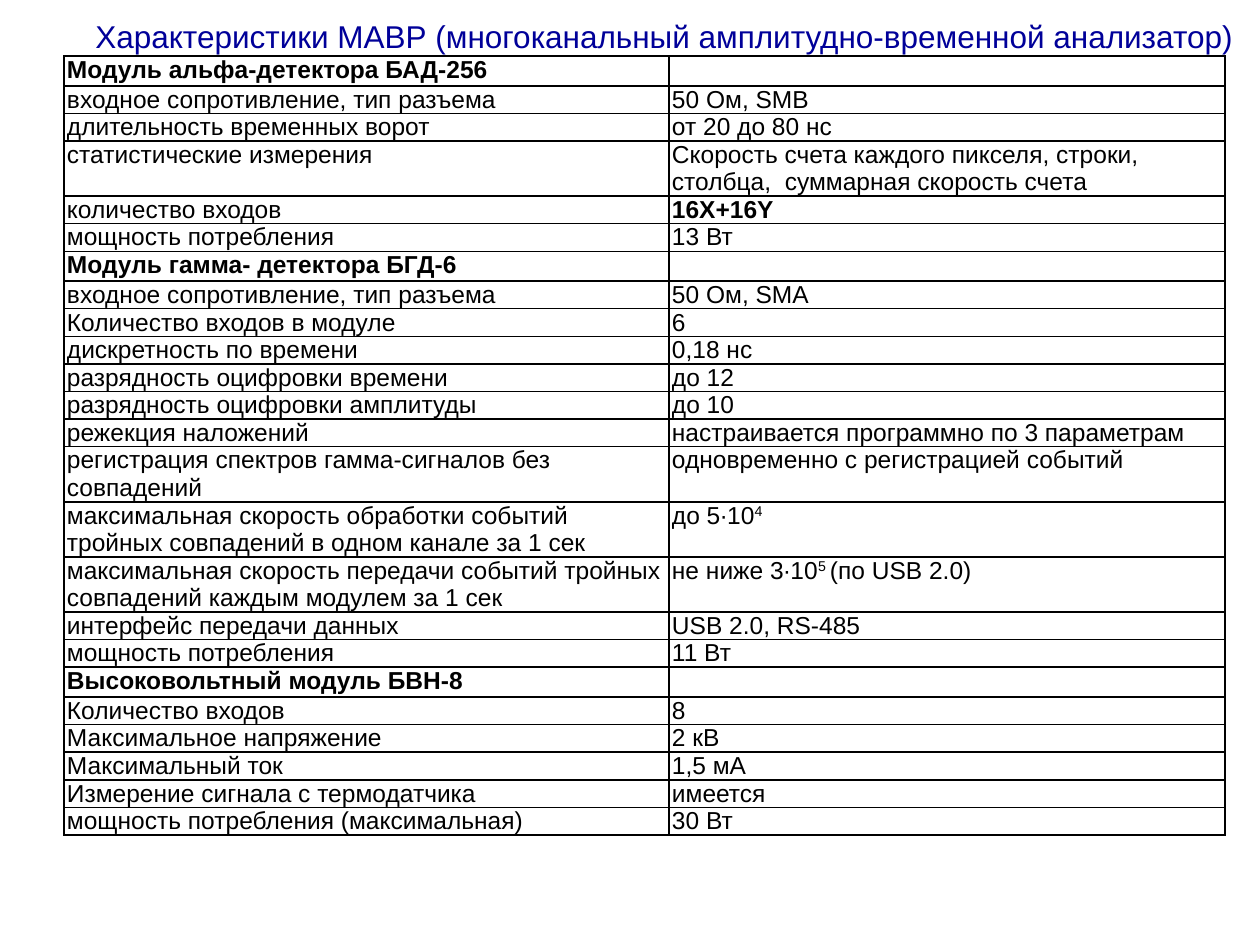
"""Build a slide with the table of analyzer module characteristics."""
from dataclasses import dataclass

from lxml import etree
from pptx import Presentation
from pptx.dml.color import RGBColor
from pptx.enum.text import MSO_ANCHOR, MSO_AUTO_SIZE, PP_ALIGN
from pptx.oxml.ns import qn
from pptx.util import Emu, Pt

CENTER = PP_ALIGN.CENTER
LEFT = PP_ALIGN.LEFT
MIDDLE = MSO_ANCHOR.MIDDLE
TOP = MSO_ANCHOR.TOP
NO_FIT = MSO_AUTO_SIZE.NONE
BLACK = RGBColor(0x00, 0x00, 0x00)
NAVY = RGBColor(0x00, 0x00, 0x99)
FACE = "Arial"
SCALE = 914400 / 126
LINE = 27
INSET = 3
COLS = (605, 556)


@dataclass
class Spec:
    label: str
    value: str = ""
    lines: int = 1
    strong: bool = False


SPECS = [
    Spec("Модуль альфа-детектора БАД-256"),
    Spec("входное сопротивление, тип разъема", "50 Ом, SMB"),
    Spec("длительность временных ворот", "от 20 до 80 нс"),
    Spec("статистические измерения",
         "Скорость счета каждого пикселя, строки, столбца,  суммарная скорость счета", 2),
    Spec("количество входов", "16X+16Y", strong=True),
    Spec("мощность потребления", "13 Вт"),
    Spec("Модуль гамма- детектора БГД-6"),
    Spec("входное сопротивление, тип разъема", "50 Ом, SMA"),
    Spec("Количество входов в модуле", "6"),
    Spec("дискретность по времени", "0,18 нс"),
    Spec("разрядность оцифровки времени", "до 12"),
    Spec("разрядность оцифровки амплитуды", "до 10"),
    Spec("режекция наложений", "настраивается программно по 3 параметрам"),
    Spec("регистрация спектров гамма-сигналов без совпадений",
         "одновременно с регистрацией событий", 2),
    Spec("максимальная скорость обработки событий тройных совпадений в одном канале за 1 сек",
         "до 5∙10^4", 2),
    Spec("максимальная скорость передачи событий тройных совпадений каждым модулем за 1 сек",
         "не ниже 3∙10^5 ^(по USB 2.0)", 2),
    Spec("интерфейс передачи данных", "USB 2.0, RS-485"),
    Spec("мощность потребления", "11 Вт"),
    Spec("Высоковольтный модуль БВН-8"),
    Spec("Количество входов", "8"),
    Spec("Максимальное напряжение", "2 кВ"),
    Spec("Максимальный ток", "1,5 мА"),
    Spec("Измерение сигнала с термодатчика", "имеется"),
    Spec("мощность потребления (максимальная)", "30 Вт"),
]


def px(count: int) -> Emu:
    """Turn pixels into EMU."""
    return Emu(round(count * SCALE))


def style(font, size: int, color: RGBColor, bold: bool = False) -> None:
    """Set the look of a font."""
    font.name = FACE
    font.size = Pt(size)
    font.bold = bold
    font.color.rgb = color


def frame(cell) -> None:
    """Give a cell black borders, no fill and tight margins."""
    props = cell._tc.get_or_add_tcPr()
    for side in ("a:lnL", "a:lnR", "a:lnT", "a:lnB"):
        edge = etree.SubElement(props, qn(side), w=str(Pt(1)))
        fill = etree.SubElement(edge, qn("a:solidFill"))
        etree.SubElement(fill, qn("a:srgbClr"), val=str(BLACK))
    cell.fill.background()
    cell.margin_left = cell.margin_right = px(INSET)
    cell.margin_top = cell.margin_bottom = 0
    cell.vertical_anchor = TOP


def write(cell, text: str, bold: bool) -> None:
    """Fill a cell, raising each part between carets."""
    frame(cell)
    para = cell.text_frame.paragraphs[0]
    para.alignment = LEFT
    if not text:
        etree.SubElement(para._p, qn("a:endParaRPr"), sz="1400")
        return
    for order, part in enumerate(text.split("^")):
        run = para.add_run()
        run.text = part
        style(run.font, 14, BLACK, bold)
        if order % 2:
            run._r.get_or_add_rPr().set("baseline", "30000")


def add_title(slide, text: str) -> None:
    """Place and format the title."""
    title = slide.shapes.title
    title.left, title.top, title.width, title.height = map(px, (69, 6, 1191, 59))
    body = title.text_frame
    body.text = text
    body.word_wrap = True
    body.auto_size = NO_FIT
    body.vertical_anchor = MIDDLE
    para = body.paragraphs[0]
    para.alignment = CENTER
    style(para.runs[0].font, 18, NAVY)


def add_specs(slide, specs: list[Spec]) -> None:
    """Draw the table of characteristics."""
    height = LINE * sum(spec.lines for spec in specs)
    table = slide.shapes.add_table(
        len(specs), len(COLS), px(64), px(56), px(sum(COLS)), px(height)).table
    table.first_row = table.horz_banding = False
    for col, width in zip(table.columns, COLS):
        col.width = px(width)
    for index, spec in enumerate(specs):
        table.rows[index].height = px(LINE * spec.lines)
        write(table.cell(index, 0), spec.label, not spec.value)
        write(table.cell(index, 1), spec.value, spec.strong)


def main() -> None:
    """Build and save the slide."""
    deck = Presentation()
    deck.slide_width, deck.slide_height = px(1260), px(945)
    slide = deck.slides.add_slide(deck.slide_layouts[5])
    add_title(slide, "Характеристики МАВР (многоканальный амплитудно-временной анализатор)")
    add_specs(slide, SPECS)
    deck.save("out.pptx")


if __name__ == "__main__":
    main()
